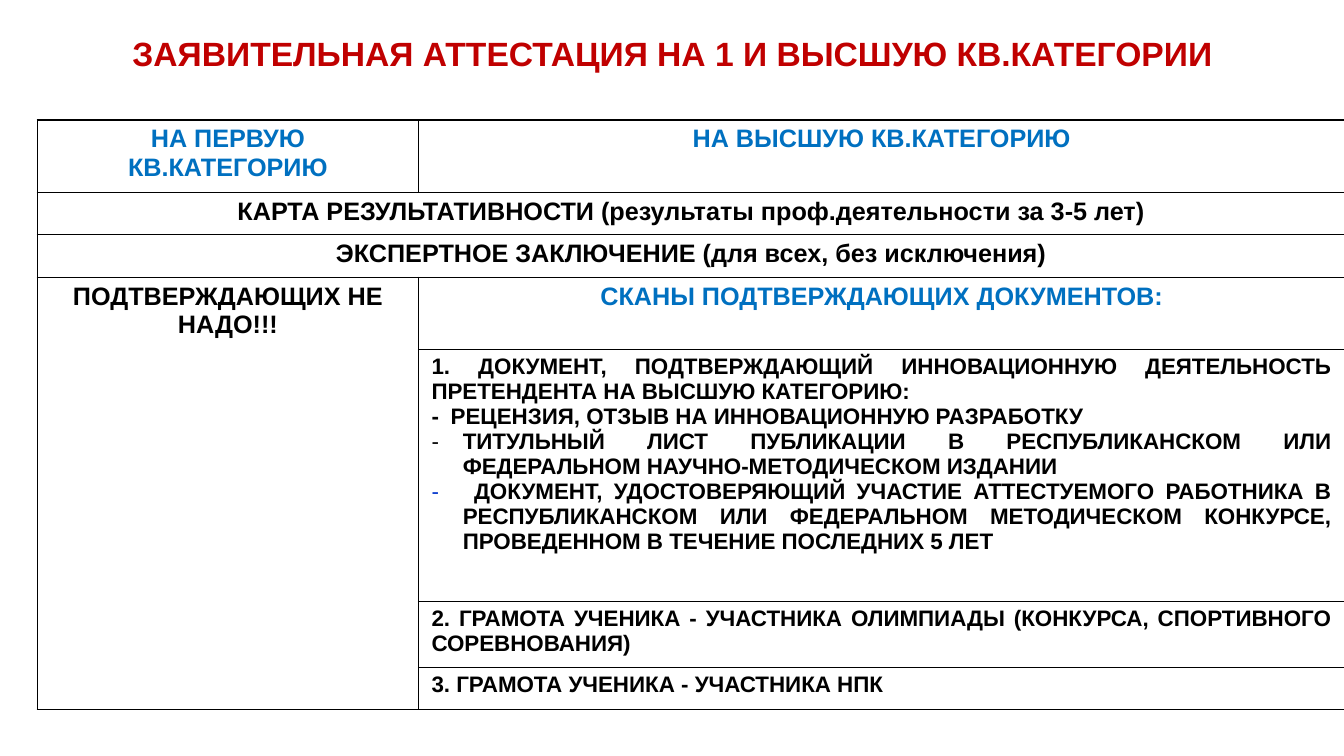
from lxml.etree import SubElement
from pptx import Presentation
from pptx.dml.color import RGBColor
from pptx.enum.text import MSO_ANCHOR, PP_ALIGN
from pptx.oxml.ns import qn
from pptx.util import Inches, Pt

RED = RGBColor(0xC0, 0x00, 0x00)
BLUE = RGBColor(0x00, 0x70, 0xC0)
BULLET_BLUE = RGBColor(0x00, 0x33, 0xCC)
BLACK = RGBColor(0x00, 0x00, 0x00)
FONT = "Arial"

COLUMN_WIDTHS = [3.78, 9.19]
ROW_HEIGHTS = [0.72, 0.42, 0.42, 0.72, 2.5, 0.65, 0.42]
HANGING_INDENT = 0.31
DASH_INDENT = 0.19

# (row, column): text, colour
HEADINGS = {
    (0, 0): ("НА ПЕРВУЮ КВ.КАТЕГОРИЮ", BLUE),
    (0, 1): ("НА ВЫСШУЮ КВ.КАТЕГОРИЮ", BLUE),
    (1, 0): ("КАРТА РЕЗУЛЬТАТИВНОСТИ (результаты проф.деятельности за 3-5 лет)", BLACK),
    (2, 0): ("ЭКСПЕРТНОЕ ЗАКЛЮЧЕНИЕ (для всех, без исключения)", BLACK),
    (3, 0): ("ПОДТВЕРЖДАЮЩИХ НЕ НАДО!!!", BLACK),
    (3, 1): ("СКАНЫ ПОДТВЕРЖДАЮЩИХ ДОКУМЕНТОВ:", BLUE),
}
DOCUMENTS = {
    4: "1. ДОКУМЕНТ, ПОДТВЕРЖДАЮЩИЙ ИННОВАЦИОННУЮ ДЕЯТЕЛЬНОСТЬ "
       "ПРЕТЕНДЕНТА НА ВЫСШУЮ КАТЕГОРИЮ:",
    5: "2. ГРАМОТА УЧЕНИКА - УЧАСТНИКА ОЛИМПИАДЫ (КОНКУРСА, СПОРТИВНОГО СОРЕВНОВАНИЯ)",
    6: "3. ГРАМОТА УЧЕНИКА - УЧАСТНИКА НПК",
}
# text, indent, bullet colour (None: the dash is part of the text)
INNOVATION_PROOFS = [
    ("-\tРЕЦЕНЗИЯ, ОТЗЫВ НА ИННОВАЦИОННУЮ РАЗРАБОТКУ", DASH_INDENT, None),
    ("ТИТУЛЬНЫЙ ЛИСТ ПУБЛИКАЦИИ В РЕСПУБЛИКАНСКОМ ИЛИ ФЕДЕРАЛЬНОМ "
     "НАУЧНО-МЕТОДИЧЕСКОМ ИЗДАНИИ", HANGING_INDENT, BLACK),
    (" ДОКУМЕНТ, УДОСТОВЕРЯЮЩИЙ УЧАСТИЕ АТТЕСТУЕМОГО РАБОТНИКА В "
     "РЕСПУБЛИКАНСКОМ ИЛИ ФЕДЕРАЛЬНОМ МЕТОДИЧЕСКОМ КОНКУРСЕ, "
     "ПРОВЕДЕННОМ В ТЕЧЕНИЕ ПОСЛЕДНИХ 5 ЛЕТ", HANGING_INDENT, BULLET_BLUE),
]


def write(paragraph, text, size, color, alignment):
    paragraph.text = text
    paragraph.alignment = alignment
    for run in paragraph.runs:
        run.font.name = FONT
        run.font.size = Pt(size)
        run.font.bold = True
        run.font.color.rgb = color


def hang(paragraph, indent, bullet_color):
    """Set a hanging indent and, if a colour is given, a dash bullet."""
    properties = paragraph._p.get_or_add_pPr()
    properties.set("marL", str(Inches(indent)))
    properties.set("indent", str(-Inches(indent)))
    if bullet_color is not None:
        fill = SubElement(properties, qn("a:buClr"))
        SubElement(fill, qn("a:srgbClr"), val=str(bullet_color))
        SubElement(properties, qn("a:buFont"), typeface=FONT)
        SubElement(properties, qn("a:buChar"), char="-")


presentation = Presentation()
presentation.slide_width = Inches(13.33)
presentation.slide_height = Inches(7.5)
slide = presentation.slides.add_slide(presentation.slide_layouts[5])

title = slide.shapes.title
title.left, title.top = Inches(0.16), Inches(0.28)
title.width, title.height = Inches(13.02), Inches(0.51)
title.text_frame.word_wrap = True
title.text_frame.vertical_anchor = MSO_ANCHOR.TOP
write(title.text_frame.paragraphs[0],
      "ЗАЯВИТЕЛЬНАЯ АТТЕСТАЦИЯ НА 1 И ВЫСШУЮ КВ.КАТЕГОРИИ",
      24, RED, PP_ALIGN.CENTER)

table = slide.shapes.add_table(
    len(ROW_HEIGHTS), len(COLUMN_WIDTHS), Inches(0.37), Inches(1.19),
    Inches(sum(COLUMN_WIDTHS)), Inches(sum(ROW_HEIGHTS))).table
table.first_row = False
table.horz_banding = False
for column, width in zip(table.columns, COLUMN_WIDTHS):
    column.width = Inches(width)
for row, height in zip(table.rows, ROW_HEIGHTS):
    row.height = Inches(height)

for cell in table.iter_cells():
    cell.margin_left = cell.margin_right = Inches(0.13)
    cell.margin_top = cell.margin_bottom = Inches(0.05)
    properties = cell._tc.get_or_add_tcPr()
    for side in ("lnL", "lnR", "lnT", "lnB"):
        border = SubElement(properties, qn(f"a:{side}"), w=str(Pt(1)))
        fill = SubElement(border, qn("a:solidFill"))
        SubElement(fill, qn("a:srgbClr"), val=str(BLACK))
    cell.fill.background()

for row in (1, 2):
    table.cell(row, 0).merge(table.cell(row, 1))
table.cell(3, 0).merge(table.cell(6, 0))

for (row, column), (text, color) in HEADINGS.items():
    paragraph = table.cell(row, column).text_frame.paragraphs[0]
    write(paragraph, text, 18, color, PP_ALIGN.CENTER)

for row, text in DOCUMENTS.items():
    paragraph = table.cell(row, 1).text_frame.paragraphs[0]
    write(paragraph, text, 16, BLACK, PP_ALIGN.JUSTIFY)

innovation_frame = table.cell(4, 1).text_frame
for text, indent, bullet_color in INNOVATION_PROOFS:
    paragraph = innovation_frame.add_paragraph()
    write(paragraph, text, 16, BLACK, PP_ALIGN.JUSTIFY)
    hang(paragraph, indent, bullet_color)

presentation.save("out.pptx")
